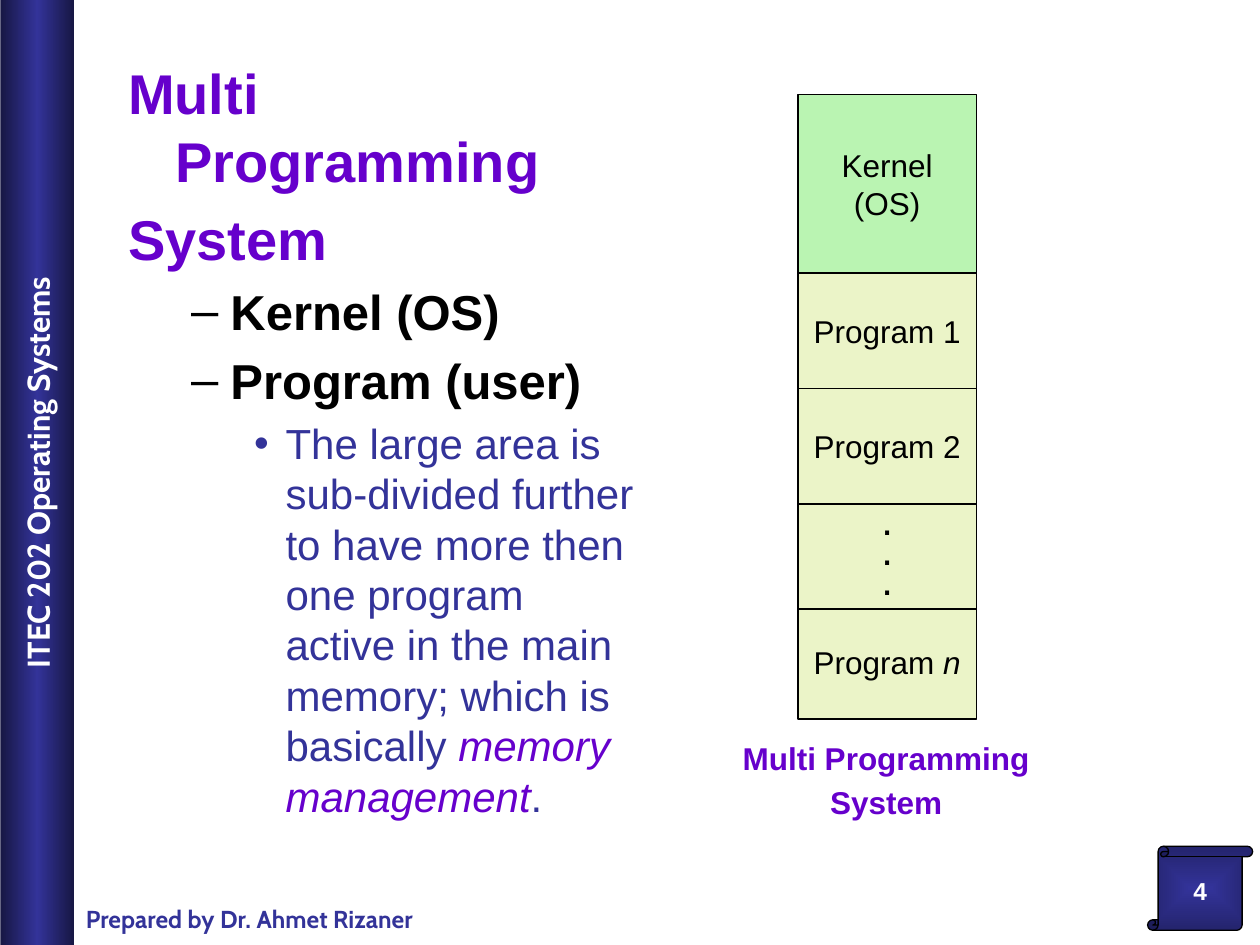
from dataclasses import dataclass

import pptx
import pptx.util
from lxml import etree
from pptx.dml.color import RGBColor
from pptx.enum.shapes import MSO_SHAPE
from pptx.enum.text import MSO_ANCHOR, MSO_AUTO_SIZE, PP_ALIGN
from pptx.oxml.ns import qn

BLACK = RGBColor(0x00, 0x00, 0x00)
WHITE = RGBColor(0xFF, 0xFF, 0xFF)
BLUE = RGBColor(0x33, 0x33, 0x99)
NAVY = RGBColor(0x17, 0x17, 0x44)
DARK_BLUE = RGBColor(0x24, 0x24, 0x6D)
PURPLE = RGBColor(0x66, 0x00, 0xCC)
GREEN = RGBColor(0xBA, 0xF4, 0xB2)
CREAM = RGBColor(0xEB, 0xF4, 0xC8)

COLS, ROWS = 120, 90  # square grid over the slide
MEMORY_COL, MEMORY_COLS = 76, 17

prs = pptx.Presentation()
prs.slide_width = pptx.util.Inches(10)
prs.slide_height = pptx.util.Inches(7.5)
slide = prs.slides.add_slide(prs.slide_layouts[1])


@dataclass(frozen=True)
class Style:
    size: int
    color: RGBColor
    bold: bool = False
    font: str = "Arial"


@dataclass(frozen=True)
class Block:
    row: float
    rows: float
    fill: RGBColor
    lines: tuple[str, ...]
    italic: str = ""
    size: int = 18
    spacing: float = 1.0


@dataclass(frozen=True)
class Point:
    text: str
    level: int
    style: Style


def box(col: float, row: float, cols: float, rows: float) -> tuple[int, ...]:
    """Grid cells to left, top, width and height."""
    w, h = prs.slide_width / COLS, prs.slide_height / ROWS
    return round(col * w), round(row * h), round(cols * w), round(rows * h)


def style_paragraph(p, style: Style) -> None:
    f = p.font
    f.name, f.size, f.bold = style.font, pptx.util.Pt(style.size), style.bold
    f.color.rgb = style.color


def write(tf, lines: tuple[str, ...], style: Style, align=PP_ALIGN.CENTER) -> None:
    tf.word_wrap = False
    for i, line in enumerate(lines):
        p = tf.paragraphs[0] if i == 0 else tf.add_paragraph()
        p.add_run().text = line
        p.alignment = align
        style_paragraph(p, style)


def add_shape(kind: MSO_SHAPE, area: tuple[int, ...], outlined: bool = True):
    s = slide.shapes.add_shape(kind, *area)
    s.shadow.inherit = False
    s.text_frame.vertical_anchor = MSO_ANCHOR.MIDDLE
    if outlined:
        s.line.color.rgb = BLACK
        s.line.width = pptx.util.Pt(0.75)
    else:
        s.line.fill.background()
    return s


def fill_gradient(s, colors: tuple[RGBColor, ...], from_center: bool = False) -> None:
    """Spread the colours evenly, downwards or outwards from the centre."""
    s.fill.gradient()
    grad = s._element.spPr.find(qn("a:gradFill"))
    grad.clear()
    stops = etree.SubElement(grad, qn("a:gsLst"))
    for i, color in enumerate(colors):
        pos = str(100000 * i // (len(colors) - 1))
        stop = etree.SubElement(stops, qn("a:gs"), pos=pos)
        etree.SubElement(stop, qn("a:srgbClr"), val=str(color))
    if from_center:
        path = etree.SubElement(grad, qn("a:path"), path="rect")
        sides = {side: "50000" for side in "ltrb"}
        etree.SubElement(path, qn("a:fillToRect"), **sides)
    else:
        etree.SubElement(grad, qn("a:lin"), ang="5400000", scaled="0")


def add_block(block: Block) -> None:
    area = box(MEMORY_COL, block.row, MEMORY_COLS, block.rows)
    s = add_shape(MSO_SHAPE.RECTANGLE, area)
    s.fill.solid()
    s.fill.fore_color.rgb = block.fill
    tf = s.text_frame
    write(tf, block.lines, Style(block.size, BLACK))
    for p in tf.paragraphs:
        p.line_spacing = block.spacing
    if block.italic:
        r = tf.paragraphs[-1].add_run()
        r.text = block.italic
        r.font.italic = True


def add_label(area: tuple[int, ...], lines: tuple[str, ...], style: Style, align):
    tf = slide.shapes.add_textbox(*area).text_frame
    write(tf, lines, style, align)
    return tf


# Sidebar with the course name, turned to read upwards
bar = add_shape(MSO_SHAPE.RECTANGLE, box(-41.5, 41.5, 90.1, 7), outlined=False)
bar.rotation = 270
fill_gradient(bar, (NAVY, BLUE, NAVY))
write(bar.text_frame, ("ITEC 202 Operating Systems",), Style(18, WHITE, True, "Cabin"))

# Footer and page number
add_label(box(7, 85.5, 38.9, 4), ("Prepared by Dr. Ahmet Rizaner",),
          Style(14, BLUE, True, "Cabin"), PP_ALIGN.LEFT)
scroll = add_shape(MSO_SHAPE.VERTICAL_SCROLL, box(109.3, 80.6, 10, 8))
fill_gradient(scroll, (BLUE, DARK_BLUE), from_center=True)
write(scroll.text_frame, ("4",), Style(14, WHITE, True))

# Outline in the body placeholder
HEADING = Style(32, PURPLE, True)
ITEM = Style(28, BLACK, True)
POINTS = (
    Point("Multi Programming", 0, HEADING),
    Point("System", 0, HEADING),
    Point("Kernel (OS)", 1, ITEM),
    Point("Program (user)", 1, ITEM),
    Point("The large area is sub-divided further to have more then one program "
          "active in the main memory; which is basically ", 2, Style(24, BLUE)),
)
title = slide.shapes.title._element
title.getparent().remove(title)
body = slide.placeholders[1]
body.left, body.top, body.width, body.height = box(11, 5, 51, 76)
tf = body.text_frame
tf.word_wrap = True
tf.auto_size = MSO_AUTO_SIZE.NONE
for i, point in enumerate(POINTS):
    p = tf.paragraphs[0] if i == 0 else tf.add_paragraph()
    p.level = point.level
    p.add_run().text = point.text
    if point.level == 0:
        etree.SubElement(p._p.get_or_add_pPr(), qn("a:buNone"))
    style_paragraph(p, point.style)
tf.paragraphs[0].space_before = pptx.util.Pt(0)
r = p.add_run()
r.text = "memory management"
r.font.italic = True
r.font.color.rgb = PURPLE
p.add_run().text = "."

# Memory map; the dots overlap the last program
BLOCKS = (
    Block(9, 17, GREEN, ("Kernel", "(OS)")),
    Block(26, 11, CREAM, ("Program 1",)),
    Block(37, 11, CREAM, ("Program 2",)),
    Block(57.5, 11, CREAM, ("Program ",), italic="n"),
    Block(48, 10, CREAM, (".", ".", "."), size=24, spacing=0.6),
)
for block in BLOCKS:
    add_block(block)

# Caption
caption = add_label(box(69.5, 69.8, 29.8, 9.1), ("Multi Programming", "System"),
                    Style(18, PURPLE, True), PP_ALIGN.CENTER)
caption.paragraphs[1].space_before = pptx.util.Pt(3.6)

prs.save("out.pptx")
